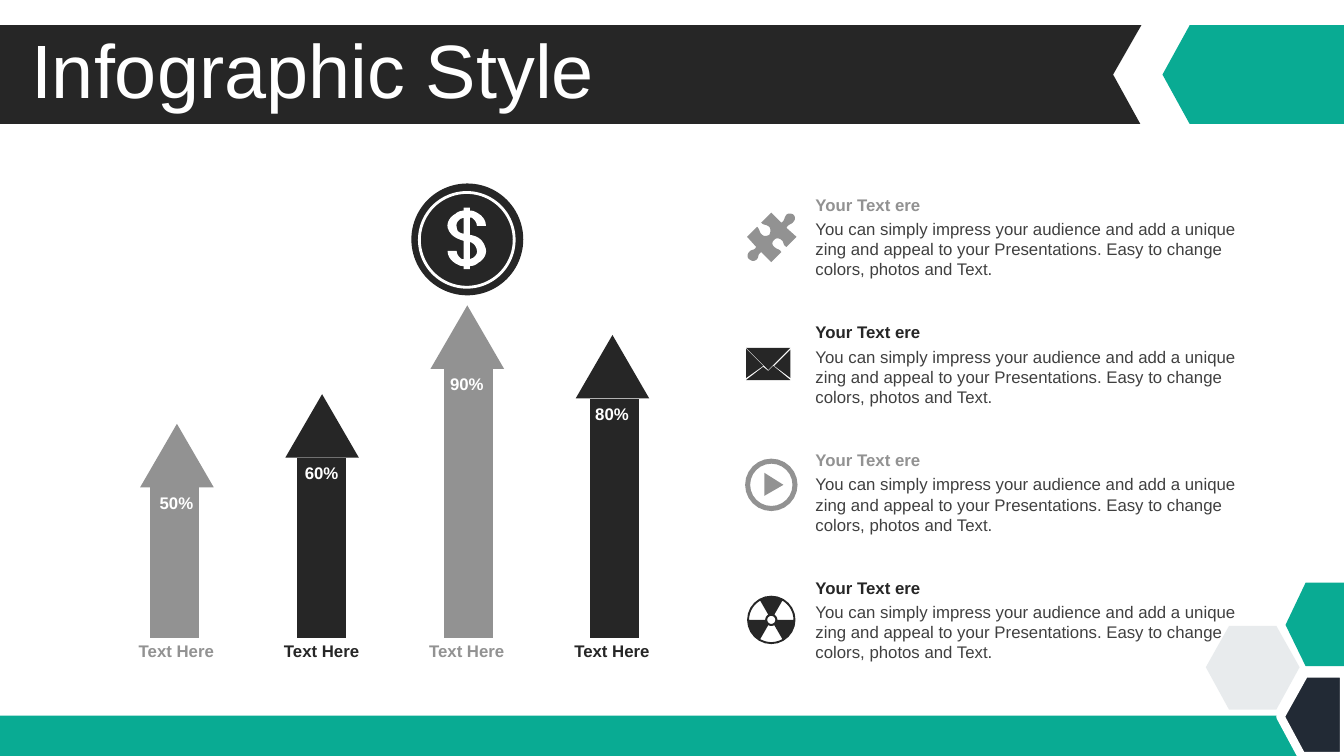
from math import cos, sin, radians
from lxml import etree
from pptx import Presentation
from pptx.chart.data import CategoryChartData
from pptx.dml.color import RGBColor
from pptx.enum.chart import XL_CHART_TYPE as ChartType
from pptx.enum.shapes import MSO_SHAPE as Preset
from pptx.enum.text import MSO_ANCHOR as Anchor, MSO_AUTO_SIZE as AutoSize, PP_ALIGN as Align
from pptx.oxml import parse_xml
from pptx.oxml.ns import nsdecls, qn
from pptx.util import Inches, Pt

# Content
WIDTH, HEIGHT = 13.33, 7.5
FONT = "Arial"
DARK, GRAY, GREEN, WHITE = "262626", "929292", "09AB93", "FFFFFF"
NAVY, PALE, BODY = "222A35", "D9DEE2", "404040"
TITLE = "Infographic Style"
ARROWS = [("50%", 56, GRAY), ("60%", 67, DARK), ("90%", 100, GRAY), ("80%", 89, DARK)]
ARROW_LABEL = "Text Here"
ITEM_HEADING = "Your Text ere"
ITEM_TEXT = ("You can simply impress your audience and add a unique zing and appeal "
             "to your Presentations. Easy to change colors, photos and Text.")
ITEM_COLORS = [GRAY, DARK, GRAY, DARK]

# Outlines in inches: a pair is a corner, six numbers are a Bezier curve
BANNER = [(0, .25), (11.32, .25), (11.04, .74), (11.31, 1.23), (0, 1.23)]
PALE_HEXAGON = [(11.96, 6.62), (12.19, 6.21), (12.66, 6.21), (12.89, 6.62),
                (12.66, 7.04), (12.19, 7.04)]
GREEN_HEXAGON = [(12.95, 5.78), (WIDTH, 5.78), (WIDTH, 6.61), (12.95, 6.61), (12.75, 6.2)]
NAVY_HEXAGON = [(WIDTH, 6.68), (WIDTH, 7.5), (12.91, 7.5), (12.7, 7.11), (12.94, 6.68)]
BANNER_TIP = [(11.8, .25), (WIDTH, .25), (WIDTH, 1.23), (11.8, 1.23), (11.53, .74)]
ENVELOPE = [
    [(7.67, 3.63), (7.84, 3.77), (7.4, 3.77), (7.57, 3.64), (7.62, 3.68)],
    [(7.84, 3.47), (7.84, 3.75), (7.68, 3.63)],
    [(7.4, 3.46), (7.57, 3.63), (7.4, 3.75)],
    [(7.4, 3.45), (7.84, 3.45), (7.62, 3.67)],
]
PUZZLE = [[
    (7.87, 2.13), (7.89, 2.15, 7.89, 2.18, 7.87, 2.2), (7.85, 2.23, 7.82, 2.22, 7.8, 2.26),
    (7.9, 2.35), (7.8, 2.45), (7.76, 2.43, 7.78, 2.4, 7.75, 2.38),
    (7.73, 2.36, 7.69, 2.36, 7.68, 2.38), (7.66, 2.39, 7.65, 2.43, 7.68, 2.45),
    (7.71, 2.48, 7.72, 2.46, 7.75, 2.5), (7.65, 2.6), (7.55, 2.5),
    (7.51, 2.53, 7.53, 2.54, 7.51, 2.57), (7.48, 2.6, 7.45, 2.59, 7.43, 2.57),
    (7.41, 2.56, 7.41, 2.52, 7.43, 2.5), (7.45, 2.47, 7.48, 2.49, 7.5, 2.45),
    (7.41, 2.35), (7.51, 2.25), (7.54, 2.28, 7.53, 2.31, 7.56, 2.33),
    (7.58, 2.35, 7.61, 2.34, 7.63, 2.33), (7.64, 2.31, 7.65, 2.28, 7.63, 2.25),
    (7.59, 2.22, 7.58, 2.24, 7.55, 2.21), (7.65, 2.11), (7.75, 2.21),
    (7.79, 2.18, 7.77, 2.17, 7.8, 2.13), (7.82, 2.11, 7.86, 2.12, 7.87, 2.13),
]]
DOLLAR = [
    [(4.6, 2.32), (4.6, 2.16), (4.59, 2.16, 4.58, 2.17, 4.57, 2.17),
     (4.54, 2.19, 4.52, 2.22, 4.53, 2.25), (4.53, 2.3, 4.56, 2.31, 4.6, 2.32)],
    [(4.66, 2.57), (4.67, 2.57, 4.68, 2.56, 4.69, 2.56),
     (4.72, 2.54, 4.74, 2.51, 4.73, 2.48), (4.72, 2.43, 4.69, 2.41, 4.66, 2.4)],
    [(4.66, 2.67), (4.6, 2.67), (4.6, 2.64), (4.58, 2.64, 4.57, 2.64, 4.55, 2.63),
     (4.48, 2.6, 4.44, 2.55, 4.44, 2.49), (4.53, 2.49), (4.53, 2.52, 4.55, 2.55, 4.58, 2.57),
     (4.59, 2.57, 4.6, 2.57, 4.6, 2.57), (4.6, 2.39), (4.54, 2.37, 4.47, 2.35, 4.44, 2.26),
     (4.43, 2.21, 4.46, 2.15, 4.52, 2.12), (4.54, 2.1, 4.57, 2.09, 4.6, 2.09),
     (4.6, 2.06), (4.66, 2.06), (4.66, 2.09), (4.68, 2.09, 4.69, 2.09, 4.71, 2.1),
     (4.78, 2.13, 4.82, 2.18, 4.82, 2.24), (4.73, 2.24), (4.73, 2.21, 4.71, 2.18, 4.68, 2.16),
     (4.67, 2.16, 4.66, 2.16, 4.66, 2.16), (4.66, 2.33), (4.72, 2.34, 4.79, 2.36, 4.82, 2.47),
     (4.83, 2.52, 4.8, 2.58, 4.74, 2.61), (4.72, 2.63, 4.69, 2.64, 4.66, 2.64)],
]

prs = Presentation()
prs.slide_width, prs.slide_height = Inches(WIDTH), Inches(HEIGHT)
slide = prs.slides.add_slide(prs.slide_layouts[6])


def rgb(color):
    return RGBColor.from_string(color)


def paint(shape, fill, line=None, points=0):
    shape.shadow.inherit = False
    shape.fill.solid()
    shape.fill.fore_color.rgb = rgb(fill)
    if line:
        shape.line.color.rgb = rgb(line)
        shape.line.width = Pt(points)
    else:
        shape.line.fill.background()
    return shape


def preset(kind, left, top, width, height, *style):
    box = map(Inches, (left, top, width, height))
    return paint(slide.shapes.add_shape(kind, *box), *style)


def arc(x, y, radius, start=0, end=360):
    steps = 24
    angles = [radians(start + (end - start) * i / steps) for i in range(steps + 1)]
    return [(x + radius * cos(a), y + radius * sin(a)) for a in angles]


def flatten(contour, steps=6):
    points = []
    for part in contour:
        if len(part) == 2:
            points.append(part)
            continue
        ends = [points[-1], part[:2], part[2:4], part[4:]]
        for t in (i / steps for i in range(1, steps + 1)):
            weights = ((1 - t) ** 3, 3 * t * (1 - t) ** 2, 3 * t * t * (1 - t), t ** 3)
            points.append(tuple(sum(w * p[axis] for w, p in zip(weights, ends))
                                for axis in (0, 1)))
    return [(Inches(x), Inches(y)) for x, y in points]


def outline(contours, *style):
    first, *others = map(flatten, contours)
    builder = slide.shapes.build_freeform(*first[0], scale=1)
    builder.add_line_segments(first[1:], close=True)
    for contour in others:
        builder.move_to(*contour[0])
        builder.add_line_segments(contour[1:], close=True)
    return paint(builder.convert_to_shape(), *style)


def write(words, left, top, width, height, color, size=12, bold=False, align=Align.LEFT):
    frame = slide.shapes.add_textbox(*map(Inches, (left, top, width, height))).text_frame
    frame.word_wrap = True
    frame.text = words
    frame.paragraphs[0].alignment = align
    font = frame.paragraphs[0].runs[0].font
    font.name, font.size, font.bold, font.color.rgb = FONT, Pt(size), bold, rgb(color)
    return frame


# Banner, footer and corner hexagons
outline([BANNER], DARK)
pale = outline([PALE_HEXAGON], PALE)
pale_color = pale.fill._xPr.find(qn("a:solidFill"))[0]
etree.SubElement(pale_color, qn("a:alpha")).set("val", "60000")
outline([GREEN_HEXAGON], GREEN)
preset(Preset.RECTANGLE, 0, 7.1, WIDTH, .4, GREEN)
outline([NAVY_HEXAGON], NAVY, WHITE, 6)
outline([BANNER_TIP], GREEN)
title = write(TITLE, .21, .34, 10.53, .79, WHITE, 54)
title.vertical_anchor, title.auto_size = Anchor.MIDDLE, AutoSize.NONE
title.paragraphs[0].line_spacing = .9

# Column chart forming the arrow shafts
data = CategoryChartData()
data.categories = [str(i + 1) for i in range(len(ARROWS))]
data.add_series("Series 1", [value for _, value, _ in ARROWS])
chart = slide.shapes.add_chart(ChartType.COLUMN_STACKED, *map(Inches, (.88, 3.22, 6.07, 3.17)),
                               data).chart
chart.has_legend = chart.has_title = False
chart.font.name, chart.font.size, chart.font.color.rgb = FONT, Pt(18), rgb("000000")
chart.value_axis.minimum_scale, chart.value_axis.maximum_scale = 0, 100
chart.value_axis.has_major_gridlines = False
chart.value_axis.visible = chart.category_axis.visible = False
shafts = chart.plots[0]
shafts.gap_width, shafts.overlap, shafts.vary_by_categories = 200, 100, False
series = shafts.series[0]
series.format.fill.solid()
series.format.fill.fore_color.rgb = rgb(DARK)
for i, (_, _, color) in enumerate(ARROWS):
    fill = series.points[i].format.fill
    fill.solid()
    fill.fore_color.rgb = rgb(color)
plot_area = chart._chartSpace.find(".//" + qn("c:plotArea"))
for layout in plot_area.findall(qn("c:layout")):
    plot_area.remove(layout)
PLOT = '<c:xMode val="edge"/><c:yMode val="edge"/><c:x val=".02"/><c:y val=".14"/>' \
       '<c:w val=".96"/><c:h val=".84"/>'
plot_area.insert(0, parse_xml(
    f'<c:layout {nsdecls("c")}><c:manualLayout><c:layoutTarget val="inner"/>{PLOT}'
    '</c:manualLayout></c:layout>'))

# Arrowheads, percentages and labels
BASELINE, FULL_HEIGHT, HEAD = 6.33, 2.67, .63
for i, (percent, value, color) in enumerate(ARROWS):
    center = 1.75 + 1.44 * i
    neck = BASELINE - FULL_HEIGHT * value / 100
    preset(Preset.ISOSCELES_TRIANGLE, center - .36, neck - HEAD, .73, HEAD, color)
    for words, top, width, ink in ((percent, neck, .72, WHITE), (ARROW_LABEL, 6.31, 1.03, color)):
        write(words, center - width / 2, top, width, .3, ink, bold=True, align=Align.CENTER)

# Text items
for i, color in enumerate(ITEM_COLORS):
    top = 1.88 + 1.267 * i
    write(ITEM_TEXT, 7.99, top + .24, 4.37, .71, BODY)
    write(ITEM_HEADING, 7.99, top, 4.37, .3, color, bold=True)

# Item icons
outline(PUZZLE, GRAY)
outline(ENVELOPE, DARK)
play = (7.65, 4.81)
outline([[(7.58, 4.69), (7.77, 4.81), (7.58, 4.92)], arc(*play, .21), arc(*play, .26)], GRAY)
hub = (7.65, 6.15)
blades = [arc(*hub, .06, a, a + 60) + arc(*hub, .22, a + 60, a) for a in (60, 180, 300)]
outline([arc(*hub, .24), arc(*hub, .04)] + blades, DARK)

# Coin
preset(Preset.OVAL, 4.08, 1.82, 1.11, 1.11, DARK)
preset(Preset.OVAL, 4.16, 1.91, .94, .94, DARK, WHITE, 2)
outline(DOLLAR, WHITE)

prs.save("out.pptx")
